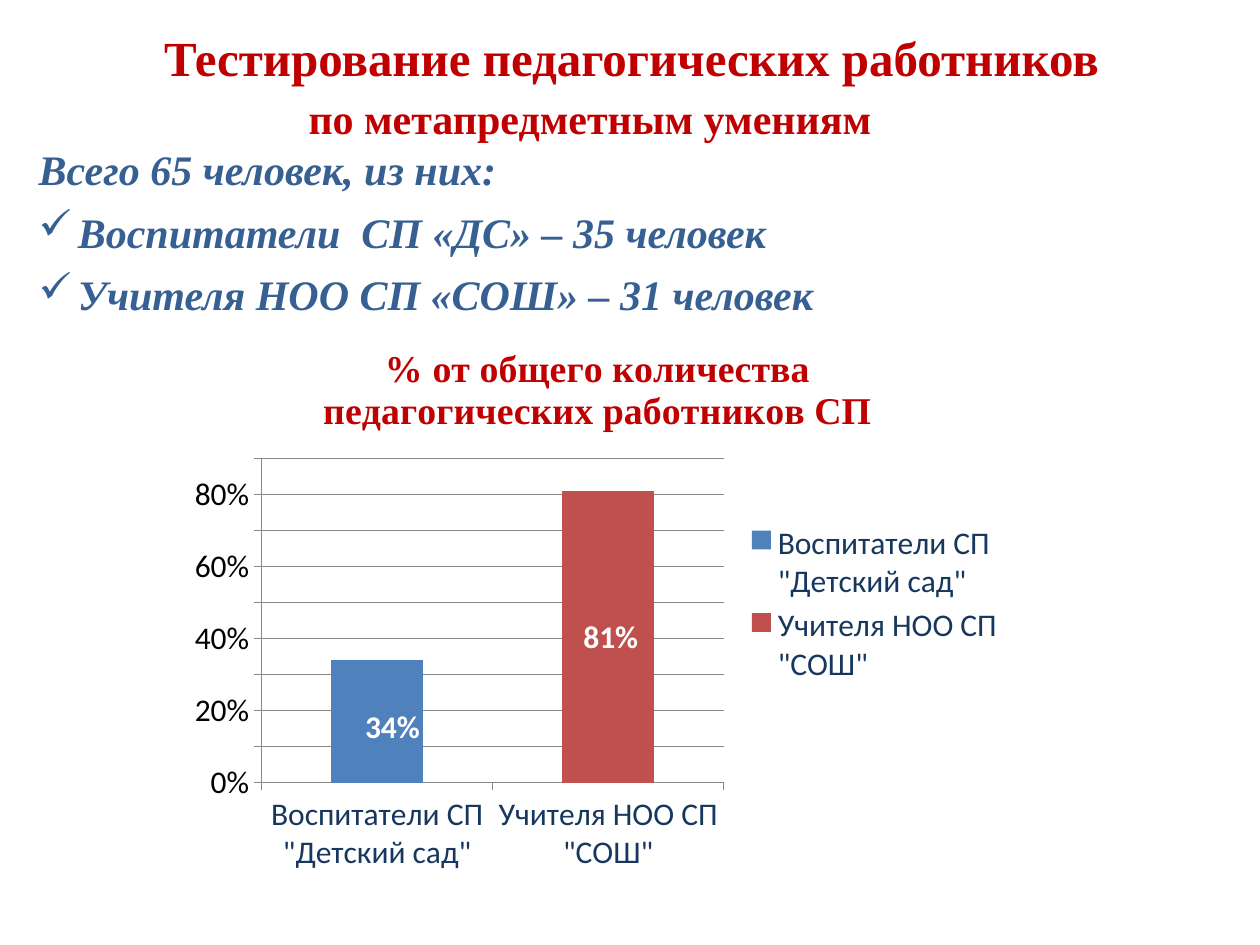
from lxml import etree
from pptx import Presentation
from pptx.chart.data import CategoryChartData
from pptx.dml.color import RGBColor
from pptx.enum.chart import XL_CHART_TYPE, XL_LEGEND_POSITION, XL_TICK_MARK
from pptx.enum.text import MSO_ANCHOR, PP_ALIGN
from pptx.oxml.ns import qn
from pptx.util import Cm, Pt

COLUMNS = XL_CHART_TYPE.COLUMN_CLUSTERED
RIGHT = XL_LEGEND_POSITION.RIGHT
OUTSIDE = XL_TICK_MARK.OUTSIDE
TOP, MIDDLE = MSO_ANCHOR.TOP, MSO_ANCHOR.MIDDLE
LEFT, CENTER = PP_ALIGN.LEFT, PP_ALIGN.CENTER

RED = RGBColor(0xC0, 0x00, 0x00)
BLUE = RGBColor(0x37, 0x60, 0x92)
NAVY = RGBColor(0x17, 0x37, 0x5E)
BLACK = RGBColor(0x00, 0x00, 0x00)
WHITE = RGBColor(0xFF, 0xFF, 0xFF)
GRAY = RGBColor(0x87, 0x87, 0x87)
BAR_COLORS = [RGBColor(0x4F, 0x81, 0xBD), RGBColor(0xC0, 0x50, 0x4D)]
SERIF, SANS = "Times New Roman", "Calibri"


def set_font(font, size, color, name=SANS, bold=False, italic=False):
    font.size = Pt(size)
    font.color.rgb = color
    font.name = name
    font.bold = bold
    font.italic = italic


def add_text(lines, left, top, width, height, size, color, name=SERIF, italic=False,
             align=LEFT, anchor=TOP, wrap=True, after=0, bullets_from=None):
    frame = slide.shapes.add_textbox(Cm(left), Cm(top), Cm(width), Cm(height)).text_frame
    frame.word_wrap = wrap
    frame.vertical_anchor = anchor
    for i, line in enumerate(lines):
        paragraph = frame.add_paragraph() if i else frame.paragraphs[0]
        if bullets_from is not None and i >= bullets_from:
            properties = paragraph._p.get_or_add_pPr()
            properties.set("marL", str(Cm(0.79)))
            properties.set("indent", str(-Cm(0.79)))
            etree.SubElement(properties, qn("a:buChar")).set("char", "✓")
        paragraph.alignment = align
        paragraph.space_after = Pt(after)
        run = paragraph.add_run()
        run.text = line
        set_font(run.font, size, color, name, True, italic)


prs = Presentation()
prs.slide_width, prs.slide_height = Cm(25.4), Cm(19.05)
slide = prs.slides.add_slide(prs.slide_layouts[6])

add_text(["Тестирование педагогических работников"], 1.3, 0.66, 22.86, 0.97,
         28, RED, align=CENTER, anchor=MIDDLE)
add_text(["Всего 65 человек, из них:", "Воспитатели  СП «ДС» – 35 человек",
          "Учителя НОО СП «СОШ» – 31 человек"], 0.53, 2.77, 22.86, 3.99,
         24, BLUE, italic=True, after=7, bullets_from=1)
add_text(["по метапредметным умениям"], 5.97, 1.75, 12.14, 1.27, 24, RED, wrap=False)

heading = ["% от общего количества", "педагогических работников СП"]
shares = CategoryChartData(number_format="0%")
shares.categories = ['Воспитатели СП "Детский сад"', 'Учителя НОО СП "СОШ"']
shares.add_series(" ".join(heading), [0.34, 0.81])
chart = slide.shapes.add_chart(COLUMNS, Cm(3.58), Cm(6.53), Cm(16.94), Cm(11.28), shares).chart
set_font(chart.font, 18, BLACK)

chart.has_title = True
chart.chart_title.include_in_layout = False
title_frame = chart.chart_title.text_frame
for i, line in enumerate(heading):
    paragraph = title_frame.add_paragraph() if i else title_frame.paragraphs[0]
    run = paragraph.add_run()
    run.text = line
    set_font(run.font, 21.6, RED, SERIF, True)

chart.has_legend = True
chart.legend.position = RIGHT
chart.legend.include_in_layout = False
set_font(chart.legend.font, 18, NAVY)

plot = chart.plots[0]
plot.vary_by_categories = True
plot.gap_width = 150
for i, color in enumerate(BAR_COLORS):
    fill = plot.series[0].points[i].format.fill
    fill.solid()
    fill.fore_color.rgb = color

share_axis, group_axis = chart.value_axis, chart.category_axis
share_axis.minimum_scale, share_axis.maximum_scale = 0, 0.9
share_axis.major_unit = 0.1
share_axis.tick_labels.number_format = "0%"
share_axis.tick_labels.number_format_is_linked = False
share_axis.has_major_gridlines = True
share_axis.major_gridlines.format.line.color.rgb = GRAY
for axis, color in [(share_axis, BLACK), (group_axis, NAVY)]:
    axis.major_tick_mark = OUTSIDE
    axis.format.line.color.rgb = GRAY
    set_font(axis.tick_labels.font, 18, color)

plot_area = chart._chartSpace.chart.plotArea
for layout in plot_area.findall(qn("c:layout")):
    plot_area.remove(layout)
layout = etree.Element(qn("c:layout"))
plot_area.insert(0, layout)
manual = etree.SubElement(layout, qn("c:manualLayout"))
for tag, value in [("layoutTarget", "inner"), ("xMode", "edge"), ("yMode", "edge"),
                   ("x", "0.1"), ("y", "0.24"), ("w", "0.55"), ("h", "0.58")]:
    etree.SubElement(manual, qn("c:" + tag)).set("val", value)

for label, left, top in [("81%", 11.51, 12.32), ("34%", 7.11, 14.12)]:
    add_text([label], left, top, 1.8, 1.02, 18, WHITE, SANS)

prs.save("out.pptx")
